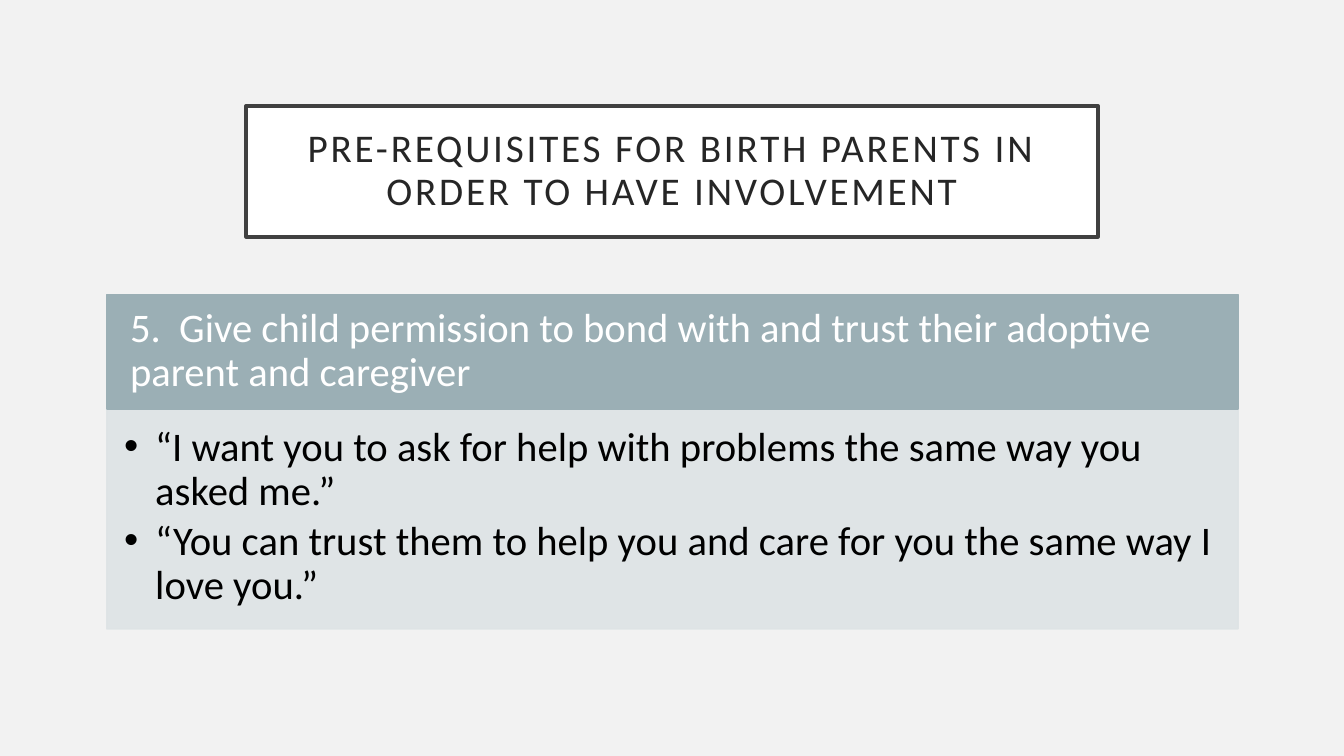
import pptx
import pptx.util
import pptx.dml.color
import pptx.enum.shapes
import pptx.enum.text
import pptx.oxml.ns
import lxml.etree

Inches = pptx.util.Inches
Pt = pptx.util.Pt
qn = pptx.oxml.ns.qn


def color(value):
    return pptx.dml.color.RGBColor.from_string(value)


def style(box, place, fill, line, line_width, insets, anchor, size, ink):
    box.left, box.top, box.width, box.height = [Inches(length) for length in place]
    box.fill.solid()
    box.fill.fore_color.rgb = color(fill)
    box.line.color.rgb = color(line)
    box.line.width = Pt(line_width)
    frame = box.text_frame
    frame.word_wrap = True
    frame.auto_size = pptx.enum.text.MSO_AUTO_SIZE.NONE
    frame.vertical_anchor = anchor
    frame.margin_left, frame.margin_top, frame.margin_right, frame.margin_bottom = [
        Inches(inset) for inset in insets
    ]
    for para in frame.paragraphs:
        para.line_spacing = 0.9
        para.space_before = Pt(0)
        para.font.name = "Calibri"
        para.font.size = Pt(size)
        para.font.color.rgb = color(ink)


deck = pptx.Presentation()
deck.slide_width = Inches(13.33)
deck.slide_height = Inches(7.5)
page = deck.slides.add_slide(deck.slide_layouts[1])
page.background.fill.solid()
page.background.fill.fore_color.rgb = color("F2F2F2")

left, width = 1.06, 11.22
middle = pptx.enum.text.MSO_ANCHOR.MIDDLE
top = pptx.enum.text.MSO_ANCHOR.TOP

title = page.shapes.title
title.text_frame.text = "PRE-REQUISITES FOR BIRTH PARENTS IN ORDER TO HAVE INVOLVEMENT"
style(title, (2.44, 1.05, 8.45, 1.3), "FFFFFF", "404040", 2.5,
      (0.2, 0.2, 0.2, 0.2), middle, 28, "262626")
title_para = title.text_frame.paragraphs[0]
title_para.alignment = pptx.enum.text.PP_ALIGN.CENTER
title_para.runs[0].font._element.set("spc", "200")

heading = page.shapes.add_shape(pptx.enum.shapes.MSO_SHAPE.RECTANGLE, 0, 0, 0, 0)
heading.shadow.inherit = False
heading.text_frame.text = (
    "5.  Give child permission to bond with and trust their adoptive parent and caregiver"
)
style(heading, (left, 2.92, width, 1.14), "9BAFB5", "9BAFB5", 1,
      (0.23, 0.13, 0.23, 0.13), middle, 29, "FFFFFF")
heading.text_frame.paragraphs[0].alignment = pptx.enum.text.PP_ALIGN.LEFT

quotes = page.placeholders[1]
quotes.text_frame.text = "\n".join([
    "“I want you to ask for help with problems the same way you asked me.”",
    "“You can trust them to help you and care for you the same way I love you.”",
])
style(quotes, (left, 4.06, width, 2.18), "DEE3E5", "DEE3E5", 1,
      (0.17, 0.17, 0.23, 0.25), top, 29, "000000")
for para in quotes.text_frame.paragraphs:
    para.space_after = Pt(4.35)
    properties = para._p.get_or_add_pPr()
    properties.set("marL", str(Inches(0.31)))
    properties.set("indent", str(Inches(-0.31)))
for tint in quotes._element.spPr.iter(qn("a:srgbClr")):
    lxml.etree.SubElement(tint, qn("a:alpha")).set("val", "90000")

deck.save("out.pptx")
